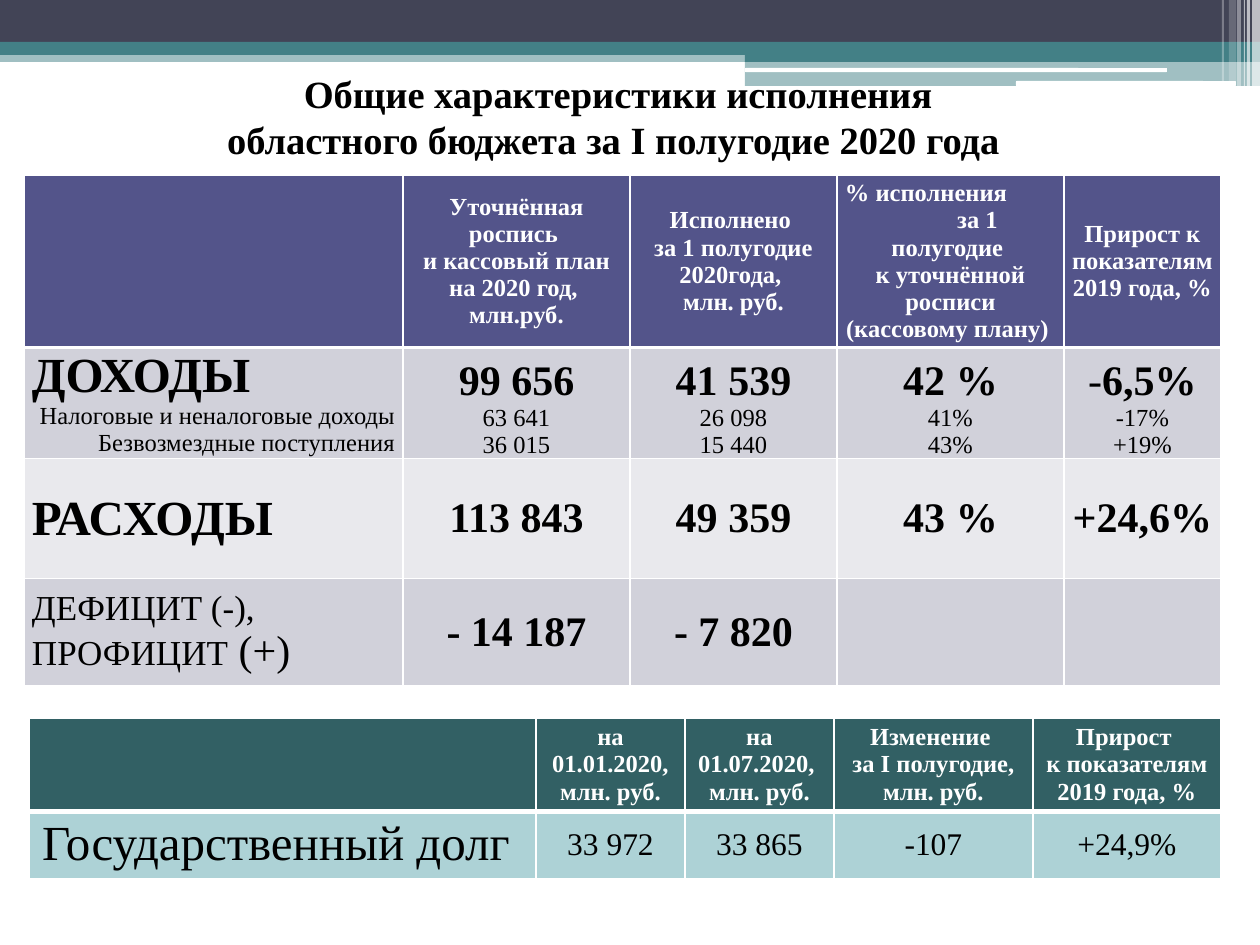
from dataclasses import dataclass

from lxml import etree
from pptx import Presentation
from pptx.dml.color import RGBColor
from pptx.enum.shapes import MSO_SHAPE
from pptx.enum.text import MSO_ANCHOR, MSO_AUTO_SIZE, PP_ALIGN
from pptx.oxml.ns import qn
from pptx.util import Emu, Pt

LEFT, CENTER, RIGHT = PP_ALIGN.LEFT, PP_ALIGN.CENTER, PP_ALIGN.RIGHT
TOP, MIDDLE, BOTTOM = MSO_ANCHOR.TOP, MSO_ANCHOR.MIDDLE, MSO_ANCHOR.BOTTOM
RECT, ROUNDED = MSO_SHAPE.RECTANGLE, MSO_SHAPE.ROUNDED_RECTANGLE

FONT = "Times New Roman"
BLACK = RGBColor(0x00, 0x00, 0x00)
WHITE = RGBColor(0xFF, 0xFF, 0xFF)
SLATE = RGBColor(0x42, 0x44, 0x56)
TEAL = RGBColor(0x43, 0x80, 0x86)
VIOLET = RGBColor(0x53, 0x54, 0x8A)
BAND_DARK = RGBColor(0xD1, 0xD1, 0xDA)
BAND_LIGHT = RGBColor(0xE9, 0xE9, 0xED)
DARK_TEAL = RGBColor(0x32, 0x60, 0x64)
PALE_TEAL = RGBColor(0xAD, 0xD2, 0xD6)

# Kind, left, top, width, height, colour, opacity in percent
DECORATION = [
    (RECT, 0, 50, 1260, 12, TEAL, 50),
    (RECT, 0, 0, 1260, 42, SLATE, 100),
    (RECT, 0, 42, 1260, 13, TEAL, 100),
    (RECT, 745, 49, 515, 13, TEAL, 100),
    (RECT, 745, 61, 515, 25, TEAL, 50),
    (ROUNDED, 745, 68, 422, 4, WHITE, 100),
    (ROUNDED, 1016, 81, 220, 5, WHITE, 100),
    (RECT, 1252, 0, 8, 86, WHITE, 65),
    (RECT, 1247, 0, 3, 86, WHITE, 65),
    (RECT, 1244, 0, 1, 86, WHITE, 60),
    (RECT, 1237, 0, 4, 86, WHITE, 40),
    (RECT, 1229, 0, 7, 81, WHITE, 20),
    (RECT, 1222, 0, 2, 81, WHITE, 30),
]


@dataclass
class Line:
    """One paragraph of a table cell."""
    text: str
    size: int = 14
    bold: bool = False
    align: PP_ALIGN = CENTER
    before: int = 0
    margin: int = 0
    dash: bool = False
    tail: str = ""
    tail_size: int = 24


def px(length):
    return Emu(round(length * 914400 / 126))


def add_span(para, text, size, bold, color):
    span = para.add_run()
    span.text = text
    span.font.name = FONT
    span.font.size = Pt(size)
    span.font.bold = bold
    span.font.color.rgb = color


def add_bar(page, kind, left, top, width, height, color, opacity):
    bar = page.shapes.add_shape(kind, px(left), px(top), px(width), px(height))
    bar.shadow.inherit = False
    bar.line.fill.background()
    bar.fill.solid()
    bar.fill.fore_color.rgb = color
    if opacity < 100:
        tint = bar.fill._xPr.find(".//" + qn("a:srgbClr"))
        etree.SubElement(tint, qn("a:alpha"), val=str(opacity * 1000))


def set_title(page, lines):
    title = page.shapes.title
    title.left, title.top, title.width, title.height = px(39), px(72), px(1158), px(88)
    frame = title.text_frame
    frame.auto_size = MSO_AUTO_SIZE.NONE
    frame.word_wrap = True
    frame.vertical_anchor = MIDDLE
    para = frame.paragraphs[0]
    para.alignment = CENTER
    for index, text in enumerate(lines):
        if index:
            para.add_line_break()
        add_span(para, text, 22, True, BLACK)
    # Bring the title in front of the bars
    page.shapes._spTree.append(title._element)


def set_borders(cell, top, bottom):
    props = cell._tc.get_or_add_tcPr()
    edges = (("a:lnL", 1), ("a:lnR", 1), ("a:lnT", top), ("a:lnB", bottom))
    for index, (tag, width) in enumerate(edges):
        edge = etree.Element(qn(tag), w=str(Pt(width)))
        fill = etree.SubElement(edge, qn("a:solidFill"))
        etree.SubElement(fill, qn("a:srgbClr"), val=str(WHITE))
        props.insert(index, edge)


def write_line(para, line, color):
    para.alignment = line.align
    if line.before:
        para.space_before = Pt(line.before)
    props = para._p.get_or_add_pPr()
    if line.margin:
        props.set("marL", str(px(line.margin)))
    if line.dash:
        props.set("marL", "0")
        props.set("indent", "0")
        etree.SubElement(props, qn("a:buFont"), typeface=FONT)
        etree.SubElement(props, qn("a:buChar"), char="-")
    add_span(para, line.text, line.size, line.bold, color)
    if line.tail:
        add_span(para, line.tail, line.tail_size, line.bold, color)


def fill_cell(cell, lines, fill, color, anchor, insets):
    cell.fill.solid()
    cell.fill.fore_color.rgb = fill
    cell.vertical_anchor = anchor
    side, edge = insets
    cell.margin_left = cell.margin_right = px(side)
    cell.margin_top = cell.margin_bottom = px(edge)
    frame = cell.text_frame
    for index, line in enumerate(lines):
        para = frame.add_paragraph() if index else frame.paragraphs[0]
        write_line(para, line, color)


def add_grid(page, left, top, columns, heights, rows, fills, insets, anchors, rule):
    """Draw a table; anchors gives (first column, other columns) for each row."""
    table = page.shapes.add_table(len(rows), len(columns), px(left), px(top),
                                  px(sum(columns)), px(sum(heights))).table
    table.horz_banding = False
    for column, width in zip(table.columns, columns):
        column.width = px(width)
    for r, cells in enumerate(rows):
        table.rows[r].height = px(heights[r])
        for c, lines in enumerate(cells):
            cell = table.cell(r, c)
            fill_cell(cell, lines, fills[r], BLACK if r else WHITE,
                      anchors[r][min(c, 1)], insets[r])
            set_borders(cell, rule if r == 1 else 1, rule if r == 0 else 1)


def header(*texts):
    return [Line(text, bold=True) for text in texts]


def big(text, dash=False):
    return Line(text, 24, True, before=5, dash=dash)


def income(total, taxes, transfers):
    return [big(total), Line(taxes), Line(transfers)]


def add_budget_table(page):
    rows = [
        [[],
         header("Уточнённая роспись ", "и кассовый план", "на 2020 год,  млн.руб."),
         header("Исполнено ", "за 1 полугодие", "2020года, ", "млн. руб."),
         [Line("% исполнения", bold=True, align=LEFT),
          Line("за 1", bold=True, margin=54),
          *header("полугодие ", "к уточнённой росписи (кассовому плану) ")],
         header("Прирост к показателям 2019 года, %")],
        [[Line("ДОХОДЫ", 28, True, LEFT),
          Line("Налоговые и неналоговые доходы", align=RIGHT),
          Line("Безвозмездные поступления", align=RIGHT)],
         income("99 656", "63 641", "36 015"),
         income("41 539", "26 098", "15 440"),
         income("42 %", "41%", "43%"),
         [big("6,5%", dash=True), Line("17%", dash=True), Line("+19%")]],
        [[Line("РАСХОДЫ", 28, True, LEFT, before=6)],
         *[[big(text)] for text in ("113 843", "49 359", "43 %", "+24,6%")]],
        [[Line("ДЕФИЦИТ (-), ПРОФИЦИТ", 20, align=LEFT, before=4, tail=" (+)")],
         [big("- 14 187")], [big("- 7 820")], [], []],
    ]
    add_grid(page, 24, 175, [379, 227, 207, 227, 157], [160, 111, 120, 107], rows,
             [VIOLET, BAND_DARK, BAND_LIGHT, BAND_DARK],
             [(8, 5), (8, 0), (8, 0), (8, 0)],
             [(MIDDLE, MIDDLE), (MIDDLE, BOTTOM), (MIDDLE, MIDDLE), (MIDDLE, MIDDLE)], 2.25)


def add_debt_table(page):
    rows = [
        [[],
         header("на 01.01.2020,", "млн. руб."),
         header("на 01.07.2020, ", "млн. руб."),
         header("Изменение ", "за I полугодие, млн. руб."),
         header("Прирост ", "к показателям 2019 года, %")],
        [[Line("Государственный долг", 28, align=LEFT)],
         *[[Line(text, 18)] for text in ("33 972", "33 865", "-107", "+24,9%")]],
    ]
    add_grid(page, 29, 718, [507, 149, 149, 199, 188], [93, 68], rows,
             [DARK_TEAL, PALE_TEAL], [(13, 6), (13, 6)],
             [(MIDDLE, MIDDLE), (TOP, MIDDLE)], 3)


def main():
    deck = Presentation()
    deck.slide_width, deck.slide_height = px(1260), px(945)
    page = deck.slides.add_slide(deck.slide_layouts[5])

    # Bars along the top, then the title
    for bar in DECORATION:
        add_bar(page, *bar)
    set_title(page, ["Общие характеристики исполнения",
                     "областного бюджета за I полугодие 2020 года "])

    # Budget figures and public debt
    add_budget_table(page)
    add_debt_table(page)
    deck.save("out.pptx")


if __name__ == "__main__":
    main()
